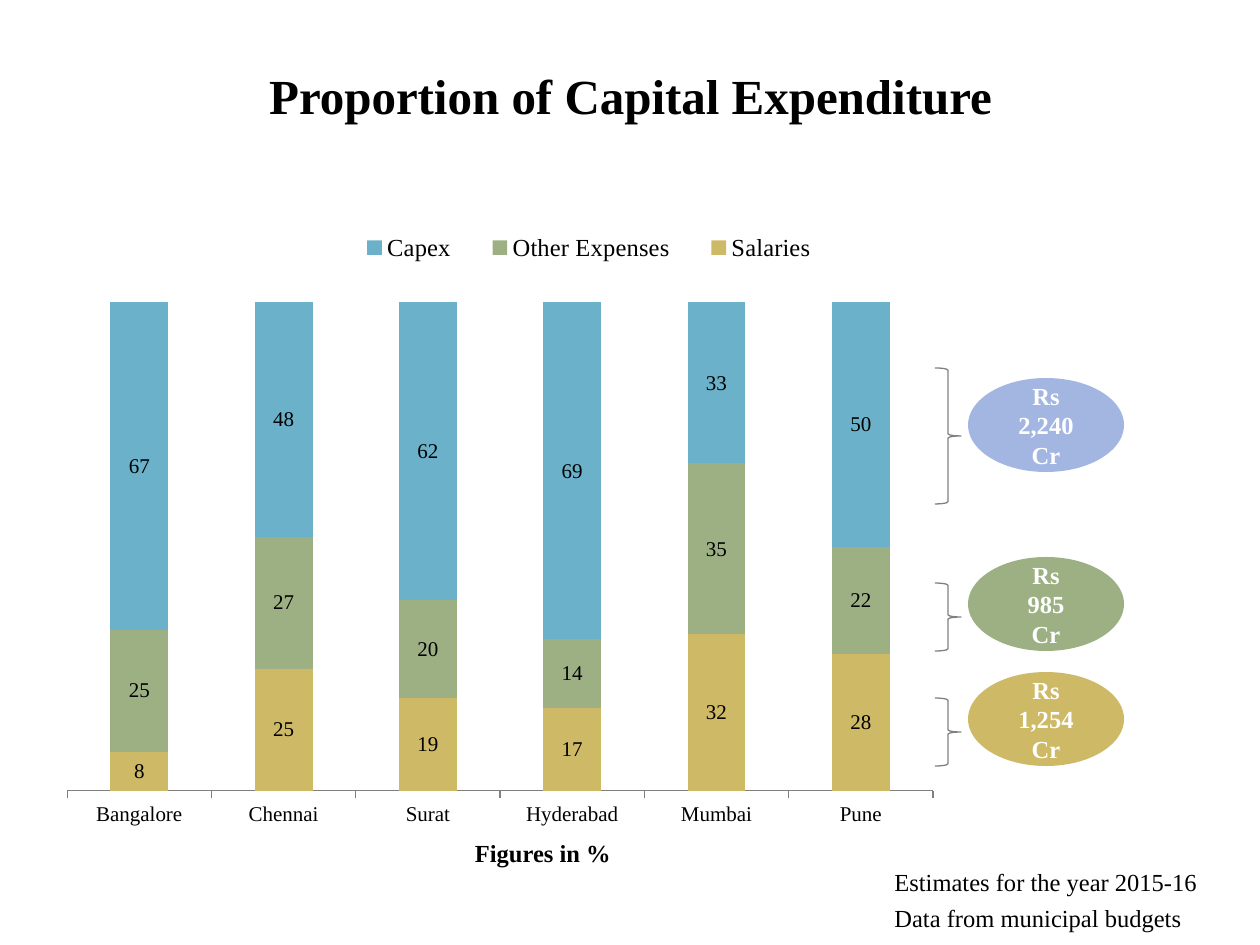
from lxml import etree
from pptx import Presentation
from pptx import util as u
from pptx.chart.data import CategoryChartData
from pptx.dml.color import RGBColor
from pptx.enum import chart as ch, shapes, text
from pptx.oxml import ns

PX = u.Inches(1) / 126
FONT = "Times New Roman"
BLACK = RGBColor(0x00, 0x00, 0x00)
WHITE = RGBColor(0xFF, 0xFF, 0xFF)
GREY = RGBColor(0x80, 0x80, 0x80)
GOLD = RGBColor(0xCE, 0xB9, 0x66)
GREEN = RGBColor(0x9C, 0xB0, 0x84)
BLUE = RGBColor(0x6B, 0xB1, 0xC9)
LILAC = RGBColor(0xA3, 0xB6, 0xE2)

CITIES = ["Bangalore", "Chennai", "Surat", "Hyderabad", "Mumbai", "Pune"]
SERIES = [
    ("Salaries", (8, 25, 19, 17, 32, 28), GOLD),
    ("Other Expenses", (25, 27, 20, 14, 35, 22), GREEN),
    ("Capex", (67, 48, 62, 69, 33, 50), BLUE),
]


def emu(*px):
    return [u.Emu(round(v * PX)) for v in px]


def set_attrs(obj, fmt):
    for name, value in fmt.items():
        setattr(obj, name, value)


def set_font(font, size, color=BLACK, bold=False):
    set_attrs(font, {"name": FONT, "size": u.Pt(size), "bold": bold})
    font.color.rgb = color


def write(sp, words, size, color=BLACK, bold=False, align=text.PP_ALIGN.CENTER,
          anchor=text.MSO_ANCHOR.MIDDLE):
    tf = sp.text_frame
    set_attrs(tf, {"word_wrap": True, "vertical_anchor": anchor, "text": words})
    for p in tf.paragraphs:
        p.alignment = align
        for r in p.runs:
            set_font(r.font, size, color, bold)


def add_text(s, box, words, size, **style):
    write(s.shapes.add_textbox(*emu(*box)), words, size, **style)


def place(parent, before, box, inner=False):
    for old in parent.findall(ns.qn("c:layout")):
        parent.remove(old)
    layout = etree.Element(ns.qn("c:layout"))
    manual = etree.SubElement(layout, ns.qn("c:manualLayout"))
    values = {"layoutTarget": "inner"} if inner else {}
    values.update(xMode="edge", yMode="edge", **dict(zip("xywh", box)))
    for tag, value in values.items():
        etree.SubElement(manual, ns.qn("c:" + tag)).set("val", str(value))
    if before is None:
        parent.insert(0, layout)
    else:
        parent.find(ns.qn(before)).addnext(layout)


def add_stack(s, box):
    data = CategoryChartData(number_format="#,##0")
    data.categories = CITIES
    for name, values, _ in SERIES:
        data.add_series(name, values)
    chart = s.shapes.add_chart(ch.XL_CHART_TYPE.COLUMN_STACKED, *emu(*box), data).chart
    set_font(chart.font, 12)
    set_attrs(chart, {"has_title": False, "has_legend": True})

    plot = chart.plots[0]
    set_attrs(plot, {"gap_width": 150, "overlap": 100, "vary_by_categories": False})
    for series, (_, _, color) in zip(plot.series, SERIES):
        series.format.fill.solid()
        series.format.fill.fore_color.rgb = color
        labels = series.data_labels
        set_attrs(labels, {"show_value": True, "number_format": "#,##0",
                           "number_format_is_linked": False,
                           "position": ch.XL_LABEL_POSITION.CENTER})
        set_font(labels.font, 12)

    set_attrs(chart.value_axis, {"minimum_scale": 0, "maximum_scale": 100,
                                 "has_major_gridlines": False, "visible": False})
    axis = chart.category_axis
    set_attrs(axis, {"major_tick_mark": ch.XL_TICK_MARK.OUTSIDE,
                     "minor_tick_mark": ch.XL_TICK_MARK.NONE})
    axis.format.line.color.rgb = GREY
    axis.format.line.width = u.Pt(0.75)

    legend = chart.legend
    set_attrs(legend, {"position": ch.XL_LEGEND_POSITION.RIGHT, "include_in_layout": False})
    set_font(legend.font, 14)
    area = plot._element.getparent()
    place(area, None, (0.02, 0.17, 0.78, 0.76), inner=True)
    place(legend._element, "c:legendPos", (0.26, 0.05, 0.46, 0.07))


def add_amount(s, box, words, color):
    sp = s.shapes.add_shape(shapes.MSO_SHAPE.OVAL, *emu(*box))
    sp.shadow.inherit = False
    sp.fill.solid()
    sp.fill.fore_color.rgb = color
    sp.line.fill.background()
    write(sp, words, 14, WHITE, True)


def add_brace(s, box):
    sp = s.shapes.add_shape(shapes.MSO_SHAPE.RIGHT_BRACE, *emu(*box))
    sp.shadow.inherit = False
    sp.fill.background()
    sp.line.color.rgb = GREY
    sp.line.width = u.Pt(0.75)


def add_callouts(s, left, top):
    rows = [
        ("Rs 2,240 Cr", LILAC, 10, 0, 136),
        ("Rs\n985\nCr", GREEN, 189, 215, 68),
        ("Rs\n1,254\nCr", GOLD, 304, 330, 68),
    ]
    for words, color, oval_top, brace_top, brace_height in rows:
        add_amount(s, (left + 33, top + oval_top, 156, 94), words, color)
        add_brace(s, (left, top + brace_top, 26, brace_height))


def add_notes(s, left, top):
    for i, words in enumerate(("Estimates for the year 2015-16", "Data from municipal budgets")):
        add_text(s, (left, top + 36 * i, 370, 43), words, 14,
                 align=text.PP_ALIGN.LEFT, anchor=text.MSO_ANCHOR.TOP)


def main():
    prs = Presentation()
    set_attrs(prs, {"slide_width": u.Inches(10), "slide_height": u.Inches(7.5)})
    s = prs.slides.add_slide(prs.slide_layouts[6])
    add_stack(s, (45, 193, 1110, 643))
    add_text(s, (53, 32, 1155, 126), "Proportion of Capital Expenditure", 28, bold=True)
    add_text(s, (370, 832, 346, 43), "Figures in %", 14, bold=True,
             anchor=text.MSO_ANCHOR.TOP)
    add_callouts(s, 935, 368)
    add_notes(s, 882, 861)
    prs.save("out.pptx")


if __name__ == "__main__":
    main()
